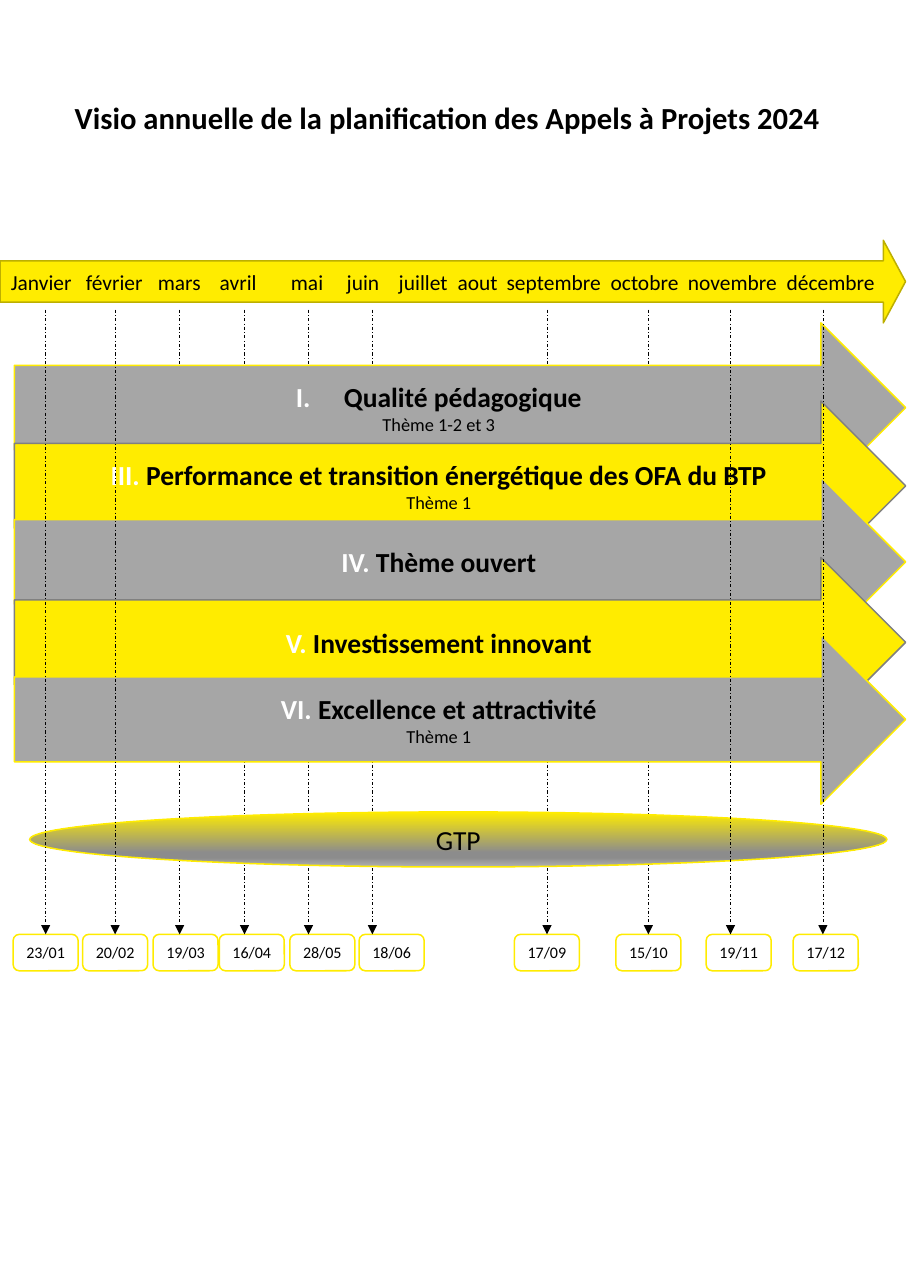
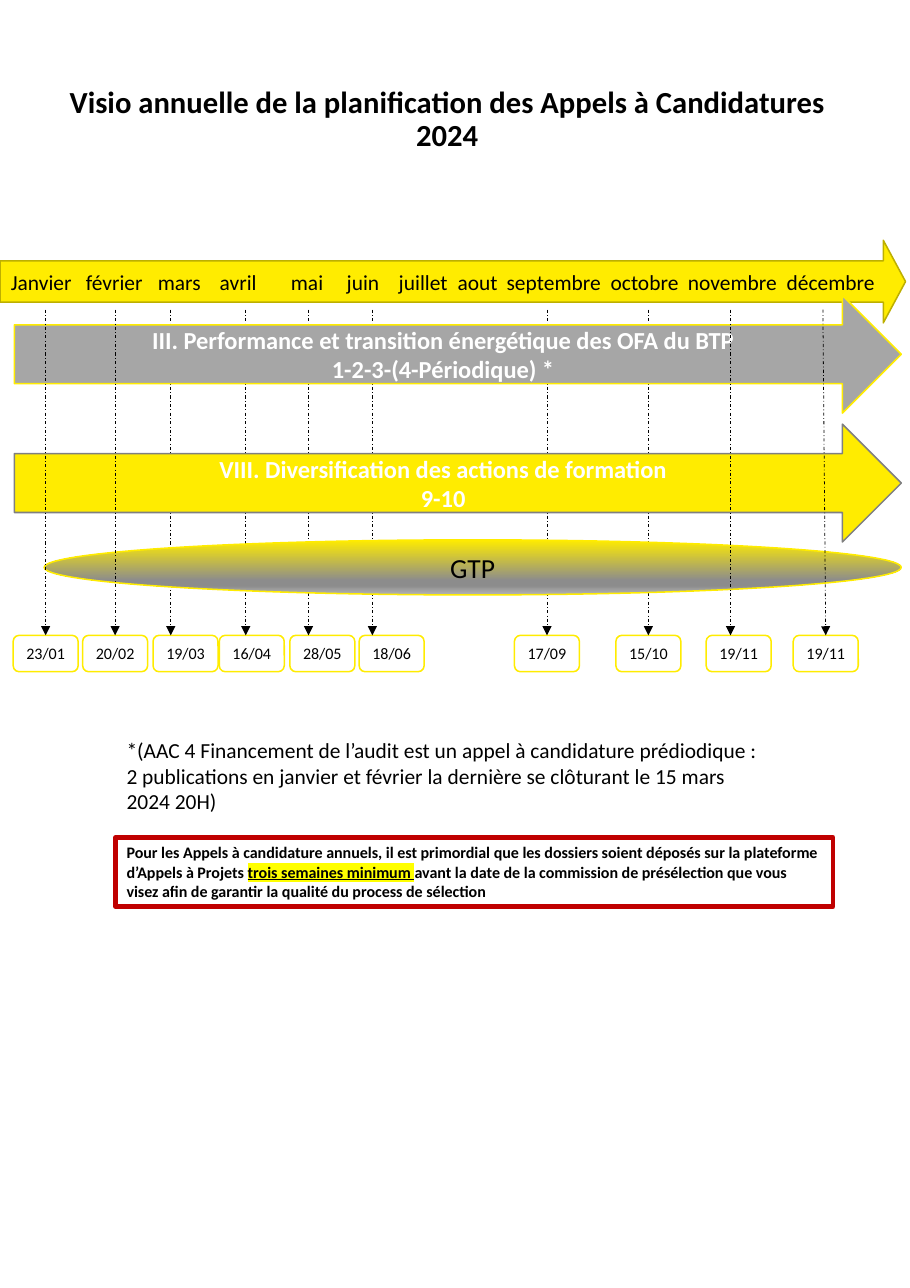
from dataclasses import dataclass, replace
from typing import Optional

from lxml.etree import SubElement
from pptx import Presentation
from pptx.dml.color import RGBColor
from pptx.enum.dml import MSO_LINE_DASH_STYLE as Dash
from pptx.enum.shapes import MSO_CONNECTOR as Connector, MSO_SHAPE as Shape
from pptx.enum.text import MSO_ANCHOR as Anchor, PP_ALIGN as Align
from pptx.oxml.ns import qn
from pptx.util import Pt


@dataclass(frozen=True)
class Theme:
    font: str = "Calibri"
    black: str = "000000"
    white: str = "FFFFFF"
    yellow: str = "FFEC00"
    olive: str = "BDAF00"
    grey: str = "A6A6A6"
    dark_grey: str = "808080"
    red: str = "C00000"
    highlight: str = "FFFF00"
    gradient: tuple = ((0, "FFEC00"), (74, "8C8C8C"), (83, "8C8C8C"), (100, "B2B2B2"))
    title: float = 20
    heading: float = 18
    subheading: float = 16
    body: float = 14
    detail: float = 12
    small: float = 10.5


@dataclass(frozen=True)
class Line:
    text: str
    size: float
    bold: bool = False
    color: str = Theme.black
    numeral: str = ""
    numbered: bool = False
    marked: str = ""
    rest: str = ""


@dataclass(frozen=True)
class Meeting:
    date: str
    left: float
    start: Optional[float] = None
    joined: bool = True
    in_front: bool = False


TAG_WIDTH, TAG_HEIGHT = 42.5, 23.8
DROP_TOP = 202.3
AXIS_WIDTH = 591.8
MONTHS = ("Janvier", "février", "mars", "avril", "mai", "juin", "juillet", "aout",
          "septembre", "octobre", "novembre", "décembre")
MONTH_STOPS = (49, 96, 136.5, 183, 219.5, 253.5, 292, 324, 392, 442.5, 507)
MEETINGS = (
    Meeting("23/01", 8.6, in_front=True),
    Meeting("20/02", 54, in_front=True),
    Meeting("19/03", 100, 117.4, False),
    Meeting("16/04", 143.3, 159.8, False),
    Meeting("28/05", 189.4, 201.6, False),
    Meeting("18/06", 234.7, 243.4, False),
    Meeting("17/09", 336.2),
    Meeting("15/10", 402.5),
    Meeting("19/11", 461.5, 477.4, False, True),
    Meeting("17/12", 518.4, 537.8, False, True),
)


class Planner:
    def __init__(self, theme):
        self.theme = theme
        self.deck = Presentation()
        self.deck.slide_width = Pt(594.7)
        self.deck.slide_height = Pt(841.7)
        self.page = None

    def new_page(self):
        self.page = self.deck.slides.add_slide(self.deck.slide_layouts[6])

    def fill_text(self, box, lines, align=Align.CENTER, anchor=Anchor.MIDDLE):
        frame = box.text_frame
        frame.word_wrap = True
        frame.vertical_anchor = anchor
        for index, line in enumerate(lines):
            para = frame.add_paragraph() if index else frame.paragraphs[0]
            para.alignment = align
            if line.numbered:
                self.number(para)
            para.font.name = self.theme.font
            para.font.size = Pt(line.size)
            para.font.bold = line.bold
            para.font.color.rgb = RGBColor.from_string(line.color)
            if line.numeral:
                span = para.add_run()
                span.text = line.numeral + " "
                span.font.color.rgb = RGBColor.from_string(self.theme.white)
            para.add_run().text = line.text
            if line.marked:
                span = para.add_run()
                span.text = line.marked
                span.font.underline = True
                mark = SubElement(span.font._element, qn("a:highlight"))
                SubElement(mark, qn("a:srgbClr"), val=self.theme.highlight)
                para.add_run().text = line.rest

    def number(self, para):
        props = para._p.get_or_add_pPr()
        props.set("marL", str(Pt(31.5)))
        props.set("indent", str(-Pt(31.5)))
        color = SubElement(props, qn("a:buClr"))
        SubElement(color, qn("a:srgbClr"), val=self.theme.white)
        SubElement(props, qn("a:buAutoNum"), type="romanUcPeriod")

    def shape(self, kind, left, top, width, height, fill, outline, weight=1):
        shape = self.page.shapes.add_shape(kind, Pt(left), Pt(top), Pt(width), Pt(height))
        shape.shadow.inherit = False
        if fill:
            shape.fill.solid()
            shape.fill.fore_color.rgb = RGBColor.from_string(fill)
        else:
            shape.fill.background()
        shape.line.color.rgb = RGBColor.from_string(outline)
        shape.line.width = Pt(weight)
        return shape

    def text(self, left, top, width, height, line, align=Align.LEFT, anchor=Anchor.TOP):
        box = self.page.shapes.add_textbox(Pt(left), Pt(top), Pt(width), Pt(height))
        self.fill_text(box, [line], align, anchor)
        return box

    def title(self, words):
        box = self.text(19.4, 59.8, 545.8, 36.7, Line(words, self.theme.title, True),
                        Align.CENTER, Anchor.MIDDLE)
        box.text_frame.paragraphs[0].line_spacing = 0.9

    def axis(self):
        arrow = self.shape(Shape.RIGHT_ARROW, 0, 157, AXIS_WIDTH, 54,
                           self.theme.yellow, self.theme.olive)
        arrow.adjustments[1] = 0.269
        props = arrow.text_frame.paragraphs[0]._p.get_or_add_pPr()
        stops = SubElement(props, qn("a:tabLst"))
        for stop in MONTH_STOPS:
            SubElement(stops, qn("a:tab"), pos=str(Pt(stop)), algn="l")
        self.fill_text(arrow, [Line("\t".join(MONTHS), self.theme.body)], Align.LEFT)

    def band(self, top, width, height, yellow, lines):
        theme = self.theme
        fill, outline = (theme.yellow, theme.dark_grey) if yellow else (theme.grey, theme.yellow)
        arrow = self.shape(Shape.RIGHT_ARROW, 9.4, top, width, height, fill, outline)
        self.fill_text(arrow, lines)

    def ellipse(self, left, top):
        theme = self.theme
        oval = self.shape(Shape.OVAL, left, top, 560.2, 36, theme.yellow, theme.yellow)
        oval.fill.gradient()
        oval.fill.gradient_angle = 270
        stops = oval._element.spPr.find(".//" + qn("a:gsLst"))
        for stop in list(stops):
            stops.remove(stop)
        for percent, color in theme.gradient:
            stop = SubElement(stops, qn("a:gs"), pos=str(percent * 1000))
            SubElement(stop, qn("a:srgbClr"), val=color)
        self.fill_text(oval, [Line("GTP", theme.heading)])

    def tag(self, meeting, top):
        theme = self.theme
        box = self.shape(Shape.ROUNDED_RECTANGLE, meeting.left, top, TAG_WIDTH, TAG_HEIGHT,
                         theme.white, theme.yellow)
        self.fill_text(box, [Line(meeting.date, theme.small)])
        return box

    def drop(self, meeting, tag):
        start = meeting.start or meeting.left + TAG_WIDTH / 2
        line = self.page.shapes.add_connector(
            Connector.STRAIGHT, Pt(start), Pt(DROP_TOP), Pt(start), tag.top)
        if meeting.joined:
            line.end_connect(tag, 0)
        line.line.color.rgb = RGBColor.from_string(self.theme.black)
        line.line.width = Pt(0.5)
        line.line.dash_style = Dash.DASH_DOT
        SubElement(line.line._get_or_add_ln(), qn("a:tailEnd"), type="triangle")
        SubElement(line._element.spPr, qn("a:effectLst"))

    def calendar(self, title, meetings, tag_top, bands, band_size, ellipse_at):
        self.new_page()
        tagged = [(meeting, self.tag(meeting, tag_top)) for meeting in meetings]
        for meeting, tag in tagged:
            if not meeting.in_front:
                self.drop(meeting, tag)
        self.title(title)
        self.axis()
        for index, (top, lines) in enumerate(bands):
            self.band(top, *band_size, index % 2 == 1, lines)
        self.ellipse(*ellipse_at)
        for meeting, tag in tagged:
            if meeting.in_front:
                self.drop(meeting, tag)

    def notice(self, line):
        box = self.shape(Shape.RECTANGLE, 75.6, 547.2, 468.7, 45.4, None, self.theme.red, 3)
        self.fill_text(box, [line], Align.LEFT, Anchor.TOP)


def main():
    theme = Theme()
    planner = Planner(theme)

    def heading(numeral, words, numbered=False):
        return Line(words, theme.heading, True, numeral=numeral, numbered=numbered)

    def detail(words):
        return Line(words, theme.detail)

    def white(words):
        return Line(words, theme.subheading, True, theme.white)

    planner.calendar(
        "Visio annuelle de la planification des Appels à Projets 2024",
        MEETINGS, 610.6,
        (
            (211, [heading("", "Qualité pédagogique", True), detail("Thème 1-2 et 3")]),
            (262.1, [heading("III.", "Performance et transition énergétique des OFA du BTP"),
                     detail("Thème 1")]),
            (311.8, [heading("IV.", "Thème ouvert")]),
            (364.3, [heading("V.", "Investissement innovant")]),
            (414.7, [heading("VI.", "Excellence et attractivité"), detail("Thème 1")]),
        ),
        (582.5, 110.9), (19.4, 530.6))

    changes = {
        "19/03": {"start": 111.6},
        "16/04": {"start": 160.6},
        "17/12": {"date": "19/11", "joined": True},
    }
    planner.calendar(
        "Visio annuelle de la planification des Appels à Candidatures 2024",
        [replace(meeting, **changes.get(meeting.date, {})) for meeting in MEETINGS], 415.2,
        (
            (193, [white("III. Performance et transition énergétique des OFA du BTP"),
                   white("1-2-3-(4-Périodique) *")]),
            (277.2, [white("VIII. Diversification des actions de formation"), white("9-10")]),
        ),
        (579.6, 77), (28.8, 352.8))
    planner.notice(Line(
        "Pour les Appels à candidature annuels, il est primordial que les dossiers soient "
        "déposés sur la plateforme d’Appels à Projets ",
        theme.small, True, marked="trois semaines minimum ",
        rest="avant la date de la commission de présélection que vous visez afin de garantir "
             "la qualité du process de sélection"))
    planner.text(75.6, 478, 428.4, 58.3, Line(
        "*(AAC 4 Financement de l’audit est un appel à candidature prédiodique : "
        "2 publications en janvier et février la dernière se clôturant le 15 mars 2024 20H)",
        theme.body))
    planner.deck.save("out.pptx")


if __name__ == "__main__":
    main()
